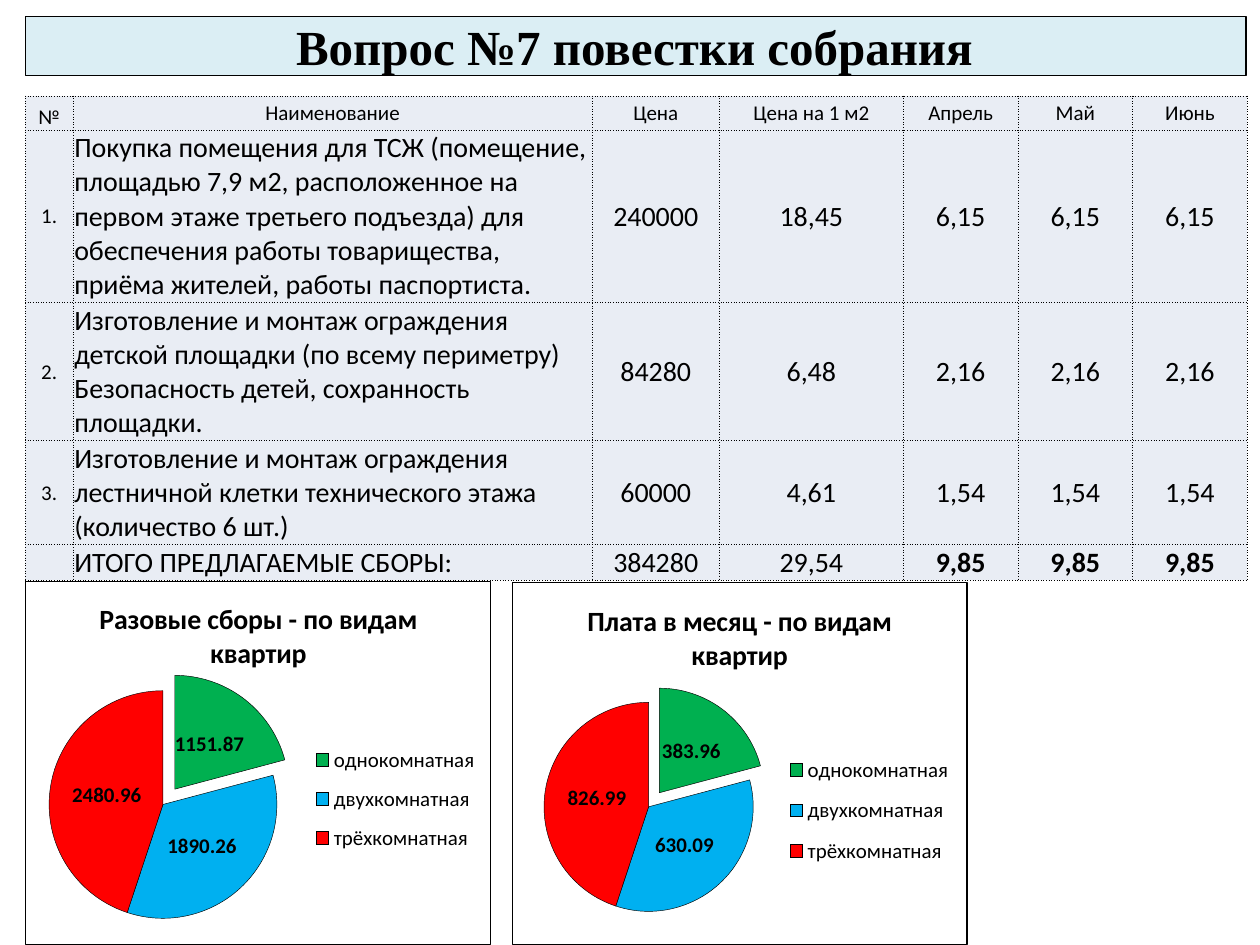
from lxml.etree import SubElement
from pptx import Presentation
from pptx.chart.data import CategoryChartData
from pptx.dml.color import RGBColor
from pptx.enum.chart import XL_CHART_TYPE, XL_LABEL_POSITION, XL_LEGEND_POSITION
from pptx.enum.text import MSO_ANCHOR, MSO_AUTO_SIZE, PP_ALIGN
from pptx.oxml import parse_xml
from pptx.oxml.ns import nsdecls, qn
from pptx.util import Inches, Pt

BLACK = RGBColor(0, 0, 0)
WHITE = RGBColor(255, 255, 255)
AQUA = RGBColor(0xDB, 0xEE, 0xF4)
PALE = RGBColor(0xE9, 0xED, 0xF4)
GREEN = RGBColor(0x00, 0xB0, 0x50)
BLUE = RGBColor(0x00, 0xB0, 0xF0)
RED = RGBColor(0xFF, 0x00, 0x00)

WIDTHS = [0.38, 4.12, 1.01, 1.46, 0.91, 0.91, 0.91]
HEIGHTS = [0.27, 1.36, 1.09, 0.82, 0.27]
ROWS = [
    ["№", "Наименование", "Цена", "Цена на 1 м2", "Апрель", "Май", "Июнь"],
    ["1.", "Покупка помещения для ТСЖ (помещение, площадью 7,9 м2, расположенное "
     "на первом этаже третьего подъезда) для обеспечения работы товарищества, "
     "приёма жителей, работы паспортиста.", "240000", "18,45"] + ["6,15"] * 3,
    ["2.", "Изготовление и монтаж ограждения детской площадки (по всему периметру) "
     "Безопасность детей, сохранность площадки.", "84280", "6,48"] + ["2,16"] * 3,
    ["3.", "Изготовление и монтаж ограждения лестничной клетки технического этажа "
     "(количество 6 шт.)", "60000", "4,61"] + ["1,54"] * 3,
    ["", "ИТОГО ПРЕДЛАГАЕМЫЕ СБОРЫ:", "384280", "29,54"] + ["9,85"] * 3,
]
FLATS = {"однокомнатная": GREEN, "двухкомнатная": BLUE, "трёхкомнатная": RED}
PIES = [
    ("Разовые сборы - по видам квартир", (0.2, 4.61, 3.7, 2.89),
     (1151.87, 1890.26, 2480.96), (0.05, 0.3, 0.49, 0.63), (0.6, 0.42, 0.39, 0.36)),
    ("Плата в месяц - по видам квартир", (4.06, 4.62, 3.62, 2.88),
     (383.96, 630.09, 826.99), (0.07, 0.33, 0.46, 0.58), (0.58, 0.44, 0.41, 0.38)),
]


def put(obj, **vals):
    """Set each attribute of obj from the given values."""
    for name, val in vals.items():
        setattr(obj, name, val)


def style(font, size, bold=False, name="Calibri"):
    """Give a font its size, weight, face and black colour."""
    put(font, size=Pt(size), bold=bold, name=name)
    font.color.rgb = BLACK


def paint(form, fill, width):
    """Fill a shape or slice and outline it in black."""
    form.fill.solid()
    form.fill.fore_color.rgb = fill
    form.line.color.rgb = BLACK
    form.line.width = Pt(width)


def add_title(slide, text):
    """Place the title in its banner."""
    title = slide.shapes.title
    put(title, left=Inches(0.2), top=Inches(0.13), width=Inches(9.69), height=Inches(0.47))
    paint(title, AQUA, 0.75)
    frame = title.text_frame
    put(frame, text=text, vertical_anchor=MSO_ANCHOR.BOTTOM, word_wrap=True,
        auto_size=MSO_AUTO_SIZE.NONE, margin_left=0, margin_top=0,
        margin_right=Inches(0.02), margin_bottom=0)
    para = frame.paragraphs[0]
    para.alignment = PP_ALIGN.CENTER
    style(para.runs[0].font, 28, True, "Times New Roman")


def add_edges(cell):
    """Draw dotted borders on all sides of a cell."""
    props = cell._tc.get_or_add_tcPr()
    for side in "LRTB":
        props.append(parse_xml(
            f'<a:ln{side} {nsdecls("a")} w="3175"><a:solidFill><a:srgbClr val="{BLACK}"/>'
            f'</a:solidFill><a:prstDash val="sysDot"/></a:ln{side}>'))


def fill_cell(cell, text, row, col):
    """Write and format one table cell."""
    add_edges(cell)
    cell.fill.solid()
    cell.fill.fore_color.rgb = PALE
    name = col == 1 and row > 0
    low = name or row == col == 0
    edge = Inches(0.01)
    put(cell, text=text, margin_left=edge, margin_top=edge, margin_right=edge, margin_bottom=0,
        vertical_anchor=MSO_ANCHOR.BOTTOM if low else MSO_ANCHOR.MIDDLE)
    para = cell.text_frame.paragraphs[0]
    para.alignment = PP_ALIGN.LEFT if name else PP_ALIGN.CENTER
    if text:
        size = 12 if row == 0 or col == 0 else 16
        style(para.runs[0].font, size, row == len(ROWS) - 1 and col > 3)
    else:
        SubElement(para._p, qn("a:endParaRPr"), sz="1200")


def add_grid(slide):
    """Add the table of proposed fees."""
    table = slide.shapes.add_table(
        len(ROWS), len(WIDTHS), Inches(0.2), Inches(0.76),
        Inches(9.69), Inches(sum(HEIGHTS))).table
    put(table, first_row=False, horz_banding=False)
    for col, width in zip(table.columns, WIDTHS):
        col.width = Inches(width)
    for r, (line, height) in enumerate(zip(ROWS, HEIGHTS)):
        table.rows[r].height = Inches(height)
        for c, text in enumerate(line):
            fill_cell(table.cell(r, c), text, r, c)


def place(part, index, spot, target=""):
    """Fix a chart part at a spot given in shares of the chart."""
    for old in part.findall(qn("c:layout")):
        part.remove(old)
    sides = "".join(f'<c:{key} val="{val}"/>' for key, val in zip("xywh", spot))
    part.insert(index, parse_xml(
        f'<c:layout {nsdecls("c")}><c:manualLayout>{target}<c:xMode val="edge"/>'
        f'<c:yMode val="edge"/>{sides}</c:manualLayout></c:layout>'))


def add_frame(chart):
    """Give the chart a white ground and a black outline."""
    chart._chartSpace.find(qn("c:txPr")).addprevious(parse_xml(
        f'<c:spPr {nsdecls("c", "a")}><a:solidFill><a:srgbClr val="{WHITE}"/></a:solidFill>'
        f'<a:ln w="9525"><a:solidFill><a:srgbClr val="{BLACK}"/></a:solidFill></a:ln></c:spPr>'))


def add_pie(slide, title, box, vals, plot, key):
    """Add a pie of fees by flat type with its first slice pulled out."""
    data = CategoryChartData()
    data.categories = list(FLATS)
    data.add_series("Series 1", vals)
    chart = slide.shapes.add_chart(XL_CHART_TYPE.PIE, *map(Inches, box), data).chart
    style(chart.font, 10)
    put(chart, has_title=True, has_legend=True)
    head = chart.chart_title.text_frame
    head.text = title
    style(head.paragraphs[0].runs[0].font, 16, True)
    put(chart.legend, position=XL_LEGEND_POSITION.RIGHT, include_in_layout=False)
    style(chart.legend.font, 12)
    pie = chart.plots[0]
    put(pie, vary_by_categories=True, has_data_labels=True)
    series = pie.series[0]
    labels = series.data_labels
    put(labels, show_value=True, show_percentage=False, number_format="0.00",
        number_format_is_linked=False, position=XL_LABEL_POSITION.CENTER)
    style(labels.font, 12, True)
    for i, color in enumerate(FLATS.values()):
        paint(series.points[i].format, color, 0.25)
    first = series._element.find(qn("c:dPt"))
    first.find(qn("c:spPr")).addprevious(
        parse_xml(f'<c:explosion {nsdecls("c")} val="17"/>'))
    add_frame(chart)
    place(chart._chartSpace.chart.plotArea, 0, plot, '<c:layoutTarget val="inner"/>')
    place(chart.legend._element, 1, key)


def main():
    """Build and save the slide."""
    deck = Presentation()
    put(deck, slide_width=Inches(10), slide_height=Inches(7.5))
    slide = deck.slides.add_slide(deck.slide_layouts[5])
    add_title(slide, "Вопрос №7 повестки собрания")
    add_grid(slide)
    for pie in PIES:
        add_pie(slide, *pie)
    deck.save("out.pptx")


if __name__ == "__main__":
    main()
